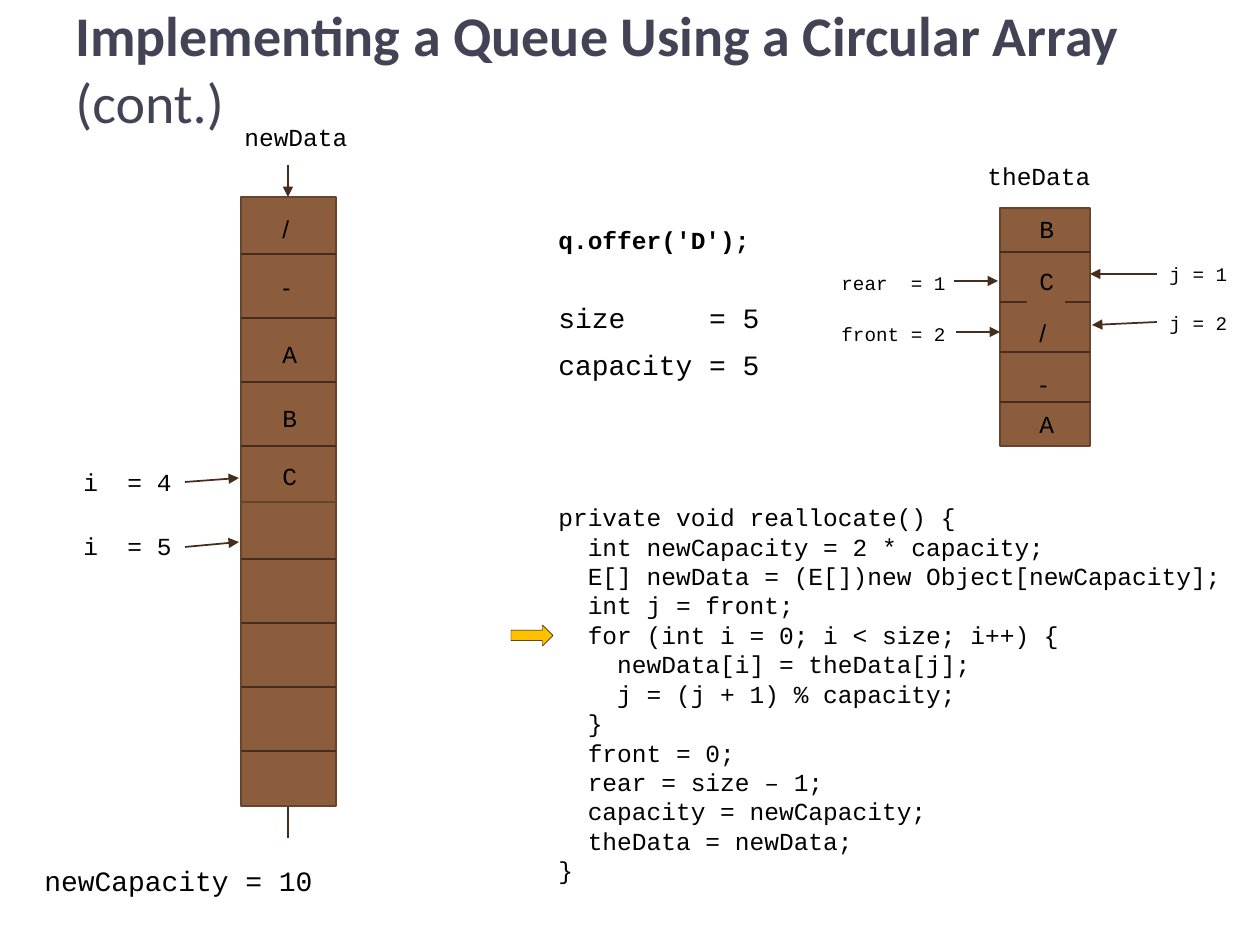
"""Build the slide on reallocating a circular-array queue."""
from lxml import etree
from pptx import Presentation
from pptx.dml.color import RGBColor
from pptx.enum.shapes import MSO_CONNECTOR, MSO_SHAPE
from pptx.enum.text import MSO_ANCHOR
from pptx.oxml.ns import qn
from pptx.util import Emu, Pt

STRAIGHT = MSO_CONNECTOR.STRAIGHT
RECTANGLE = MSO_SHAPE.RECTANGLE
RIGHT_ARROW = MSO_SHAPE.RIGHT_ARROW
MIDDLE = MSO_ANCHOR.MIDDLE
PX = 914400 / 126
MONO = "Courier New"
BROWN, EDGE, DARK = "8B5D3D", "67452D", "462E1F"
color = RGBColor.from_string

deck = Presentation()
deck.slide_width, deck.slide_height = Emu(9144000), Emu(6858000)
slide = deck.slides.add_slide(deck.slide_layouts[6])
shapes = slide.shapes


def add_label(text, left, top, width, height, size=14, font=MONO, bold=False):
    box = shapes.add_textbox(*[Emu(round(v * PX)) for v in (left, top, width, height)])
    box.text_frame.word_wrap = True
    box.text_frame.text = text
    for paragraph in box.text_frame.paragraphs:
        paragraph.font.size = Pt(size)
        paragraph.font.name = font
        paragraph.font.bold = bold
        paragraph.font.color.rgb = color("000000")
    return box


def add_line(x1, y1, x2, y2, arrow=False):
    line = shapes.add_connector(STRAIGHT, *[Emu(round(v * PX)) for v in (x1, y1, x2, y2)])
    line.line.color.rgb = color(DARK)
    line.line.width = Pt(1)
    if arrow:
        etree.SubElement(line.line._get_or_add_ln(), qn("a:tailEnd"), type="triangle")
    etree.SubElement(line._element.spPr, qn("a:effectLst"))


title = add_label("", 63, 0, 1124, 136, 32, "Calibri")
title.text_frame.vertical_anchor = MIDDLE
heading = title.text_frame.paragraphs[0]
heading.font.color.rgb = color("424456")
for words, bold in (("Implementing a Queue Using a Circular Array ", True), ("(cont.)", False)):
    run = heading.add_run()
    run.text = words
    run.font.bold = bold

add_label("q.offer('D');", 546, 219, 630, 43, bold=True)
add_label("size     = 5", 546, 294, 230, 47, 16)
add_label("capacity = 5", 546, 341, 230, 47, 16)
add_label("newCapacity = 10", 32, 857, 420, 47, 16)
add_label("newData", 232, 116, 136, 43)
add_label("theData", 975, 155, 136, 43)

reallocate_code = """private void reallocate() {
  int newCapacity = 2 * capacity;
  E[] newData = (E[])new Object[newCapacity];
  int j = front;
  for (int i = 0; i < size; i++) {
    newData[i] = theData[j];
    j = (j + 1) % capacity;
  }
  front = 0;
  rear = size – 1;
  capacity = newCapacity;
  theData = newData;
}"""
add_label(reallocate_code, 546, 496, 693, 398)

add_line(288, 165, 288, 197, arrow=True)
add_line(288, 806, 288, 838)

for left, top, width, height, first, step in (
    (1000, 208, 90, 238, 44, 50),
    (241, 197, 95, 305, 57, 64),
    (241, 502, 95, 304, 57, 64),
):
    array = shapes.add_shape(RECTANGLE, *[Emu(round(v * PX)) for v in (left, top, width, height)])
    array.shadow.inherit = False
    array.fill.solid()
    array.fill.fore_color.rgb = color(BROWN)
    array.line.color.rgb = color(EDGE)
    array.line.width = Pt(1.5)
    for row in range(4):
        divider = top + first + row * step
        add_line(left, divider, left + width, divider)

for left, elements in (
    (1027, (("B", 208), ("C", 260), ("/", 312), ("-", 363), ("A", 403))),
    (270, (("/", 208), ("-", 266), ("A", 333), ("B", 397), ("C", 455))),
):
    for element, top in elements:
        cell = add_label(element, left, top, 38, 43, font=MONO if element.isalpha() else "Arial")
        if (left, element) == (1027, "C"):
            cell.fill.solid()
            cell.fill.fore_color.rgb = color(BROWN)

for index, left, top, width, height, size, pointer in (
    ("rear  = 1", 829, 265, 131, 36, 11, (954, 281, 998, 281)),
    ("front = 2", 829, 316, 131, 36, 11, (956, 332, 1000, 332)),
    ("j = 1", 1157, 256, 84, 36, 11, (1157, 274, 1090, 274)),
    ("j = 2", 1157, 305, 84, 36, 11, (1157, 322, 1092, 325)),
    ("i  = 4", 71, 461, 115, 43, 14, (185, 482, 239, 478)),
    ("i  = 5", 71, 525, 115, 43, 14, (185, 547, 239, 542)),
):
    add_label(index, left, top, width, height, size)
    add_line(*pointer, arrow=True)

current_step = shapes.add_shape(RIGHT_ARROW, *[Emu(round(v * PX)) for v in (511, 625, 42, 21)])
current_step.shadow.inherit = False
current_step.fill.solid()
current_step.fill.fore_color.rgb = color("FFC000")
current_step.line.color.rgb = color("000000")
current_step.line.width = Pt(0.25)

deck.save("out.pptx")
